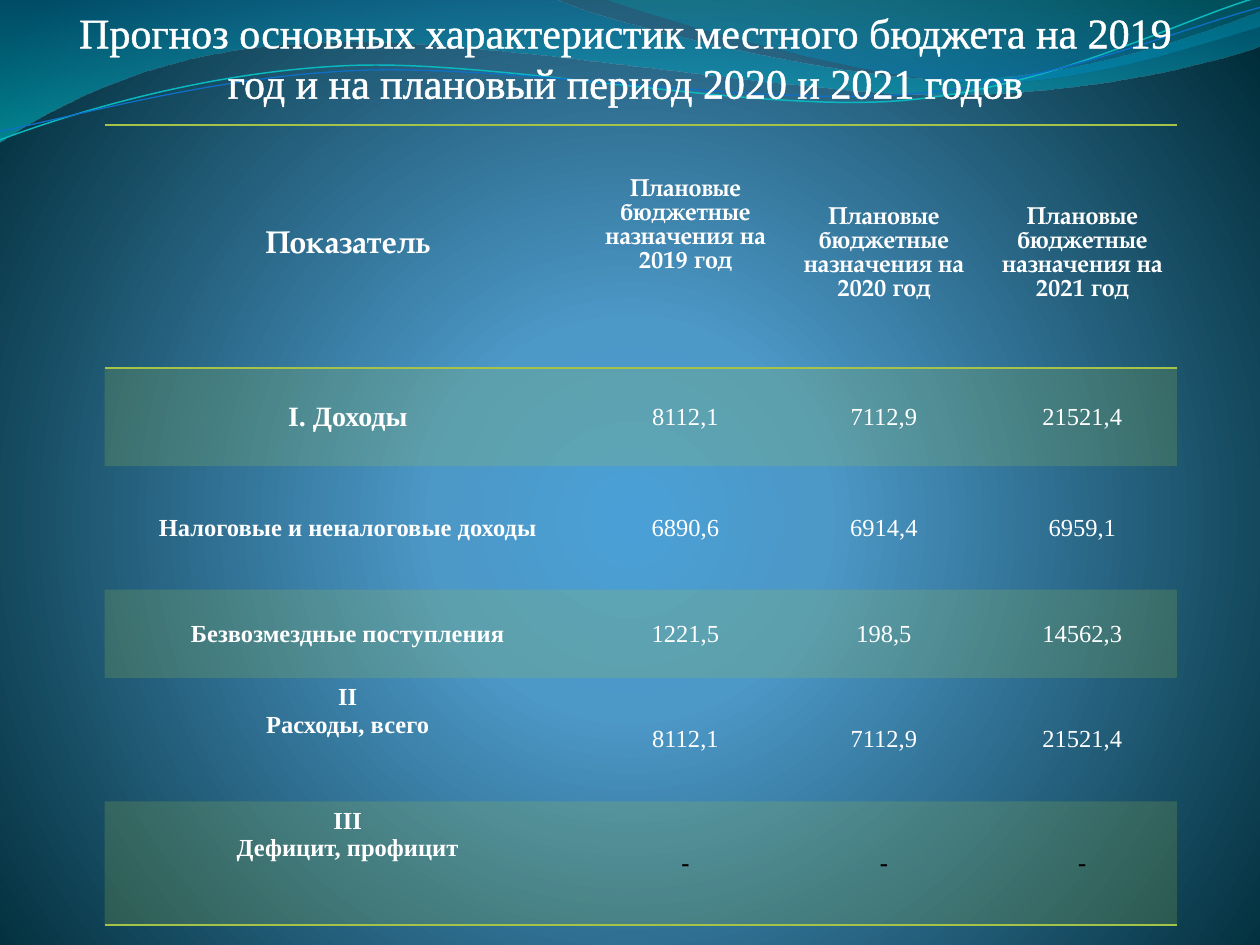
import math
from dataclasses import dataclass
from typing import Optional

from lxml import etree
from pptx import Presentation
from pptx.dml.color import RGBColor
from pptx.enum import text
from pptx.oxml import parse_xml
from pptx.oxml.ns import nsdecls, qn
from pptx.util import Emu, Inches, Pt

WHITE, BLACK, LIME = "FFFFFF", "000000", "A5C249"
SERIF, BOOK = "Times New Roman", "TeX Gyre Pagella"
NO_STYLE = "{2D5ABB26-0587-4C30-8999-92F81FD0307C}"
COLUMNS = [3.86, 1.5, 1.65, 1.5]
ROWS = [1.93, 0.78, 0.98, 0.7, 0.98, 0.98]
TITLE = ("Прогноз основных характеристик местного бюджета на 2019 год "
         "и на плановый период 2020 и 2021 годов")
INDICATORS = [
    ("I. Доходы", "8112,1", "7112,9", "21521,4"),
    ("Налоговые и неналоговые доходы", "6890,6", "6914,4", "6959,1"),
    ("Безвозмездные поступления", "1221,5", "198,5", "14562,3"),
    ("II\nРасходы, всего", "8112,1", "7112,9", "21521,4"),
    ("III\nДефицит, профицит", "-", "-", "-"),
]


@dataclass
class Stop:
    position: int
    color: str
    opacity: int = 100


@dataclass
class Wave:
    """A start point, then curves of three points or straight lines of one."""
    start: tuple
    segments: list
    stops: Optional[list] = None
    line: Optional[tuple] = None
    tilt: float = 0
    center: tuple = (0, 0)


@dataclass
class CellLook:
    size: float = 14
    font: str = SERIF
    color: str = WHITE
    bold: bool = False
    top_anchor: bool = False
    top_margin: float = 0.05
    line_pitch: Optional[float] = None


WAVES = [
    Wave((0, 0), [
        [(4.4, -0.01)],
        [(4.76, 0.17), (6.64, 0.63), (7.58, 0.63)],
        [(8.53, 0.63), (9.58, 0.26), (10, 0.09)],
        [(10.01, 0.36)],
        [(9.83, 0.44), (8.7, 0.76), (7.46, 0.75)],
        [(6.22, 0.75), (3.82, 0.28), (2.57, 0.34)],
        [(1.29, 0.36), (0.46, 0.83), (-0.01, 1.13)],
        [(0, 0)],
    ], stops=[Stop(0, "0074A1", 45), Stop(100, "00C6CF", 55)]),
    Wave((4.79, -0.01), [
        [(5.09, 0.11), (6.82, 0.62), (7.69, 0.65)],
        [(8.56, 0.69), (9.61, 0.32), (10, 0.21)],
        [(10, 0)],
        [(4.79, -0.01)],
    ], stops=[Stop(0, "00A1A9", 30), Stop(80, "008BBF", 45)]),
    Wave((0, 1.11), [
        [(0.48, 0.93), (1.58, 0.57), (2.77, 0.52)],
        [(3.95, 0.47), (5.93, 0.89), (7.13, 0.8)],
        [(8.33, 0.71), (9.38, 0.15), (9.98, -0.02)],
    ], line=("0AB8BF", 0.85), tilt=-2.7, center=(4.99, 0.57)),
    Wave((0, 1.04), [
        [(0.47, 0.96), (1.64, 0.61), (2.83, 0.56)],
        [(4.03, 0.51), (5.97, 0.84), (7.17, 0.75)],
        [(8.36, 0.67), (9.41, 0.21), (10, 0.06)],
    ], line=("0F6FC6", 0.75), tilt=-2.7, center=(5, 0.59)),
]


def rgb(color: str) -> RGBColor:
    return RGBColor.from_string(color)


def gradient(stops: list, direction: str):
    marks = "".join(
        f'<a:gs pos="{s.position * 1000}"><a:srgbClr val="{s.color}">'
        f'<a:alpha val="{s.opacity * 1000}"/></a:srgbClr></a:gs>' for s in stops)
    return parse_xml(f'<a:gradFill {nsdecls("a")} rotWithShape="1">'
                     f'<a:gsLst>{marks}</a:gsLst>{direction}</a:gradFill>')


def outline(tag: str, color: str, width: float):
    return parse_xml(f'<a:{tag} {nsdecls("a")} w="{Pt(width)}"><a:solidFill>'
                     f'<a:srgbClr val="{color}"/></a:solidFill></a:{tag}>')


def paint_background(slide) -> None:
    slide.background.fill.solid()
    solid = slide.background._cSld.find(".//" + qn("a:solidFill"))
    stops = [Stop(0, "4AA0D6"), Stop(25, "4C98C7"), Stop(100, "002C38")]
    focus = ('<a:path path="circle"><a:fillToRect l="10000" t="110000" '
             'r="10000" b="100000"/></a:path>')
    solid.getparent().replace(solid, gradient(stops, focus))


def level(point: tuple, wave: Wave) -> tuple:
    """Undo the wave's tilt, which the shape's rotation then gives back."""
    angle = math.radians(-wave.tilt)
    dx, dy = point[0] - wave.center[0], point[1] - wave.center[1]
    return (Inches(wave.center[0] + dx * math.cos(angle) - dy * math.sin(angle)),
            Inches(wave.center[1] + dx * math.sin(angle) + dy * math.cos(angle)))


def bend(shape, segments: list) -> None:
    """Join the straight steps of each three-point segment into one curve."""
    steps = iter(list(shape._element.iter(qn("a:lnTo"))))
    for segment in segments:
        first, *others = [next(steps) for _ in segment]
        if others:
            first.tag = qn("a:cubicBezTo")
        for step in others:
            first.append(step[0])
            step.getparent().remove(step)


def draw_wave(slide, wave: Wave) -> None:
    builder = slide.shapes.build_freeform(*level(wave.start, wave))
    builder.add_line_segments(
        [level(point, wave) for segment in wave.segments for point in segment],
        close=wave.stops is not None)
    shape = builder.convert_to_shape()
    bend(shape, wave.segments)
    shape.rotation = wave.tilt
    shape.shadow.inherit = False
    if wave.stops:
        shape.fill.solid()
        solid = shape._element.spPr.find(qn("a:solidFill"))
        down = '<a:lin ang="5400000" scaled="1"/>'
        solid.getparent().replace(solid, gradient(wave.stops, down))
        shape.line.fill.background()
    else:
        color, width = wave.line
        shape.fill.background()
        shape.line.color.rgb = rgb(color)
        shape.line.width = Pt(width)


def write_cell(cell, wording: str, look: CellLook) -> None:
    cell.text_frame.text = wording
    cell.margin_top = Inches(look.top_margin)
    anchor = text.MSO_ANCHOR
    cell.vertical_anchor = anchor.TOP if look.top_anchor else anchor.MIDDLE
    for paragraph in cell.text_frame.paragraphs:
        paragraph.alignment = text.PP_ALIGN.CENTER
        if look.line_pitch:
            paragraph.line_spacing = Pt(look.line_pitch)
        for run in paragraph.runs:
            run.font.size, run.font.name = Pt(look.size), look.font
            run.font.bold, run.font.color.rgb = look.bold, rgb(look.color)


def shade_cell(cell, row: int) -> None:
    edges = {0: ("lnT", "lnB"), len(ROWS) - 1: ("lnB",)}.get(row, ())
    properties = cell._tc.get_or_add_tcPr()
    for edge in edges:
        properties.append(outline(edge, LIME, 1))
    if row % 2 == 0:
        cell.fill.background()
        return
    cell.fill.solid()
    cell.fill.fore_color.rgb = rgb(LIME)
    tint = properties.find(qn("a:solidFill"))[0]
    etree.SubElement(tint, qn("a:alpha"), val="20000")


def cell_look(row: int, column: int, wording: str) -> CellLook:
    if row == 0 and column == 0:
        return CellLook(18, BOOK, bold=True)
    if row == 0:
        first_year = column == 1
        return CellLook(font=BOOK, bold=True, top_anchor=first_year, line_pitch=13.7,
                        top_margin=0.43 if first_year else 0.18)
    if column == 0:
        return CellLook(16 if row == 1 else 14, bold=True, top_anchor="\n" in wording)
    empty = wording == "-"
    return CellLook(color=BLACK if empty else WHITE, bold=empty)


def add_budget_table(slide) -> None:
    header = ("Показатель", *(f"Плановые бюджетные назначения на {year} год"
                              for year in (2019, 2020, 2021)))
    frame = slide.shapes.add_table(len(ROWS), len(COLUMNS), Inches(0.83), Inches(0.99),
                                   Inches(sum(COLUMNS)), Inches(sum(ROWS)))
    budget = frame.table
    budget.first_row = budget.horz_banding = False
    budget._tbl.tblPr.find(qn("a:tableStyleId")).text = NO_STYLE
    for column, width in zip(budget.columns, COLUMNS):
        column.width = Inches(width)
    for r, wordings in enumerate([header, *INDICATORS]):
        budget.rows[r].height = Inches(ROWS[r])
        for c, wording in enumerate(wordings):
            write_cell(budget.cell(r, c), wording, cell_look(r, c, wording))
            shade_cell(budget.cell(r, c), r)


def set_title(slide) -> None:
    title = slide.shapes.title
    title.left, title.top, title.width, title.height = (
        Inches(0.28), Emu(0), Inches(9.37), Inches(0.91))
    title.text_frame.text = TITLE
    title.text_frame.vertical_anchor = text.MSO_ANCHOR.TOP
    paragraph = title.text_frame.paragraphs[0]
    paragraph.alignment = text.PP_ALIGN.CENTER
    font = paragraph.runs[0].font
    font.size, font.name, font.color.rgb = Pt(24), SERIF, rgb(WHITE)
    paragraph.runs[0]._r.get_or_add_rPr().insert(0, outline("ln", WHITE, 0.83))
    slide.shapes._spTree.append(title._element)


def main() -> None:
    deck = Presentation()
    deck.slide_width, deck.slide_height = Inches(10), Inches(7.5)
    slide = deck.slides.add_slide(deck.slide_layouts[5])
    paint_background(slide)
    for wave in WAVES:
        draw_wave(slide, wave)
    add_budget_table(slide)
    set_title(slide)
    deck.save("out.pptx")


if __name__ == "__main__":
    main()
